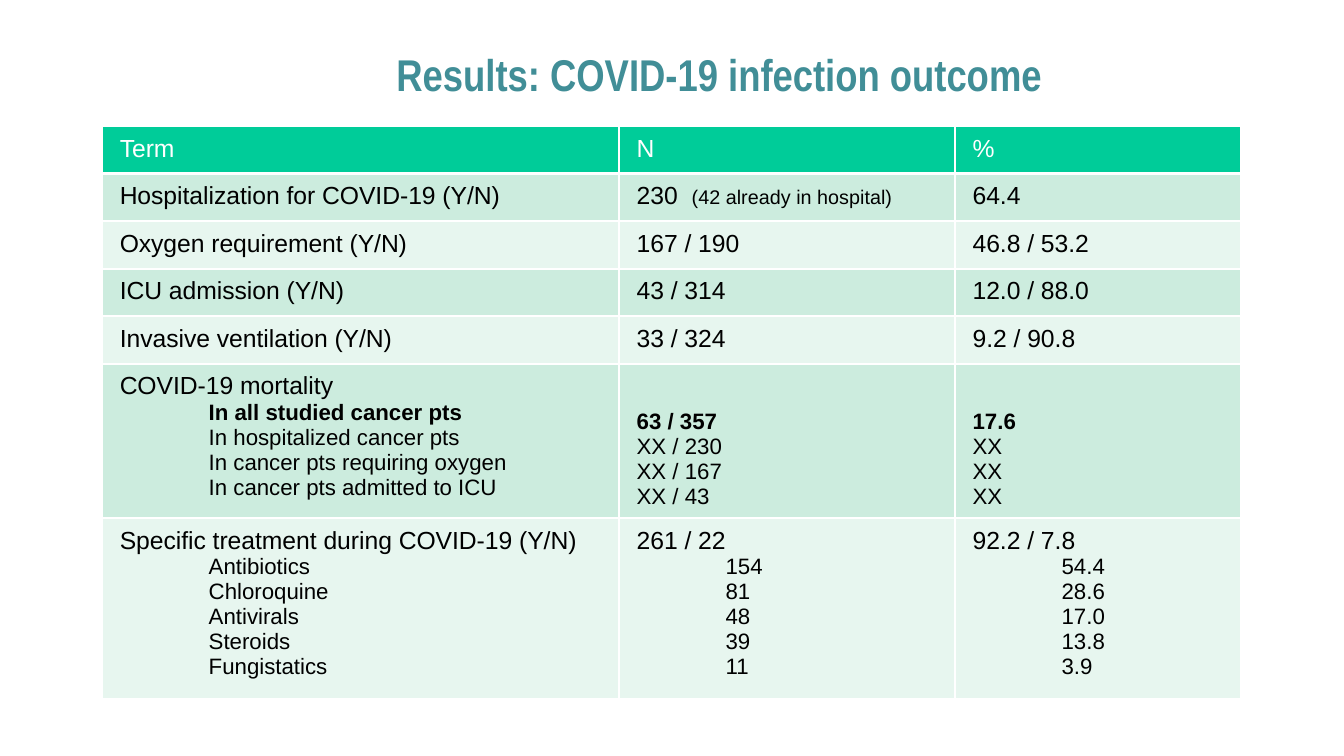
import pptx
import pptx.dml.color
import pptx.enum.text
import pptx.oxml
import pptx.oxml.ns
import pptx.util

TITLE = "Results: COVID-19 infection outcome"

# Each cell: main text, then optional sub-lines
ROWS = [
    [["Term"], ["N"], ["%"]],
    [["Hospitalization for COVID-19 (Y/N)"], ["230"], ["64.4"]],
    [["Oxygen requirement (Y/N)"], ["167 / 190"], ["46.8 / 53.2"]],
    [["ICU admission (Y/N)"], ["43 / 314"], ["12.0 / 88.0"]],
    [["Invasive ventilation (Y/N)"], ["33 / 324"], ["9.2 / 90.8"]],
    [
        ["COVID-19 mortality", "In all studied cancer pts", "In hospitalized cancer pts",
         "In cancer pts requiring oxygen", "In cancer pts admitted to ICU"],
        ["63 / 357", "XX / 230", "XX / 167", "XX / 43"],
        ["17.6", "XX", "XX", "XX"],
    ],
    [
        ["Specific treatment during COVID-19 (Y/N)", "Antibiotics", "Chloroquine",
         "Antivirals", "Steroids", "Fungistatics"],
        ["261 / 22", "154", "81", "48", "39", "11"],
        ["92.2 / 7.8", "54.4", "28.6", "17.0", "13.8", "3.9"],
    ],
]
HOSPITAL_NOTE = "(42 already in hospital)"
HOSPITALIZATION, MORTALITY = 1, 5
BOLD_LINES = {"In all studied cancer pts", "63 / 357", "17.6"}

THEME = {
    "title": {"name": "Arial Narrow", "size": 18, "bold": True, "color": "418E97"},
    "header": {"name": "Arial", "size": 10, "bold": False, "color": "FFFFFF"},
    "main": {"name": "Arial", "size": 10, "bold": False, "color": "000000"},
    "sub": {"name": "Arial", "size": 9, "bold": False, "color": "000000"},
    "note": {"name": "Arial", "size": 8, "bold": False, "color": "000000"},
    "header_fill": "00CC99",
    "band_fills": ("E7F6EF", "CCECDE"),
    "border": "FFFFFF",
}

PX = 5143
PAGE_SIZE = (1344, 756)
TITLE_BOX = (379, 43, 916, 55)
TABLE_AT = (102, 126)
COLUMN_WIDTHS = (517, 336, 286)
ROW_HEIGHTS = (45, 45, 45, 45, 45, 145, 170)
SUB_MARGIN, SUB_INDENT = 144, -55
NOTE_TAB = 55


def emu(*lengths):
    return [length * PX for length in lengths]


def rgb(value):
    return pptx.dml.color.RGBColor.from_string(value)


def add_span(para, text, style):
    span = para.add_run()
    span.text = text
    formats = {"name": style["name"], "size": pptx.util.Pt(style["size"]), "bold": style["bold"]}
    for name, value in formats.items():
        setattr(span.font, name, value)
    span.font.color.rgb = rgb(style["color"])


def add_borders(cell):
    """Draw all four sides; the line elements must come before the fill."""
    properties = cell._tc.get_or_add_tcPr()
    for position, side in enumerate(("lnL", "lnR", "lnT", "lnB")):
        properties.insert(position, pptx.oxml.parse_xml(
            f'<a:{side} {pptx.oxml.ns.nsdecls("a")} w="12700"><a:solidFill>'
            f'<a:srgbClr val="{THEME["border"]}"/></a:solidFill></a:{side}>'))


def add_note(para):
    """Set the hospital note at a tab stop behind the count."""
    para._p.get_or_add_pPr().append(pptx.oxml.parse_xml(
        f'<a:tabLst {pptx.oxml.ns.nsdecls("a")}>'
        f'<a:tab pos="{NOTE_TAB * PX}" algn="l"/></a:tabLst>'))
    add_span(para, "\t" + HOSPITAL_NOTE, THEME["note"])


def fill_cell(cell, lines, row, column):
    cell.fill.solid()
    cell.fill.fore_color.rgb = rgb(THEME["band_fills"][row % 2] if row else THEME["header_fill"])
    add_borders(cell)
    mortality_figures = row == MORTALITY and column > 0
    if mortality_figures:
        cell.vertical_anchor = pptx.enum.text.MSO_ANCHOR.BOTTOM
    for index, line in enumerate(lines):
        para = cell.text_frame.add_paragraph() if index else cell.text_frame.paragraphs[0]
        is_sub = index > 0 or mortality_figures
        if is_sub and not mortality_figures:
            para.level = 1
            layout = para._p.get_or_add_pPr()
            layout.set("marL", str(SUB_MARGIN * PX))
            layout.set("indent", str(SUB_INDENT * PX))
        style = THEME["header" if row == 0 else "sub" if is_sub else "main"]
        add_span(para, line, {**style, "bold": line in BOLD_LINES})
    if (row, column) == (HOSPITALIZATION, 1):
        add_note(cell.text_frame.paragraphs[0])


def add_title(page):
    box = page.shapes.add_textbox(*emu(*TITLE_BOX))
    box.text_frame.word_wrap = True
    para = box.text_frame.paragraphs[0]
    para.line_spacing = 0.93
    add_span(para, TITLE, THEME["title"])


def add_results(page):
    size = (sum(COLUMN_WIDTHS), sum(ROW_HEIGHTS))
    frame = page.shapes.add_table(len(ROWS), len(COLUMN_WIDTHS), *emu(*TABLE_AT, *size))
    table = frame.table
    table.horz_banding = False
    for column, width in zip(table.columns, emu(*COLUMN_WIDTHS)):
        column.width = width
    for row, height in zip(table.rows, emu(*ROW_HEIGHTS)):
        row.height = height
    for row, cells in enumerate(ROWS):
        for column, lines in enumerate(cells):
            fill_cell(table.cell(row, column), lines, row, column)


def main():
    deck = pptx.Presentation()
    deck.slide_width, deck.slide_height = emu(*PAGE_SIZE)
    page = deck.slides.add_slide(deck.slide_layouts[6])
    add_title(page)
    add_results(page)
    deck.save("out.pptx")


if __name__ == "__main__":
    main()
